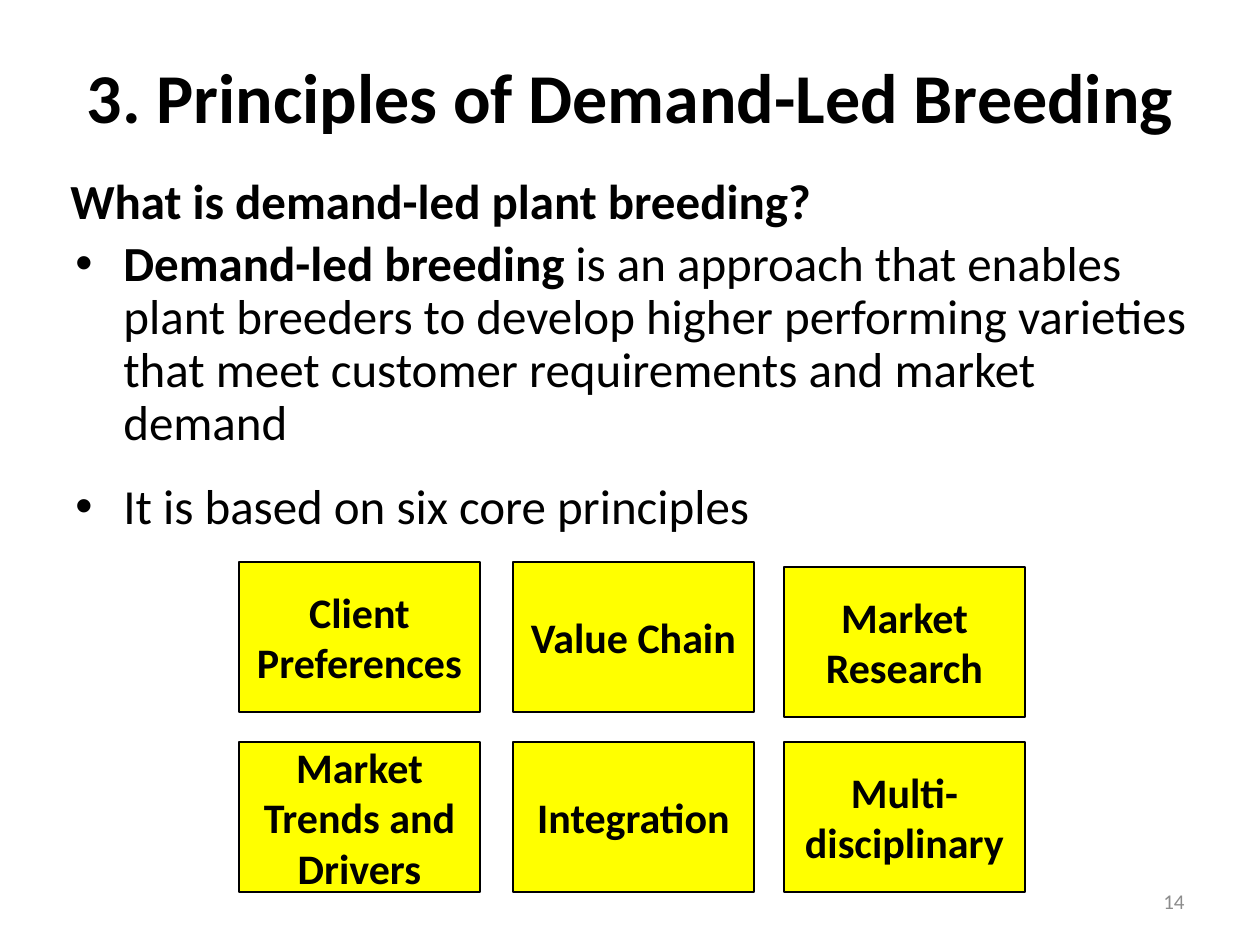
import pptx
import pptx.dml.color
import pptx.enum.shapes
import pptx.enum.text
import pptx.oxml.ns
import pptx.util
from lxml import etree

PX = 914400 / 126
ALIGN = pptx.enum.text.PP_ALIGN
MIDDLE = pptx.enum.text.MSO_ANCHOR.MIDDLE
TOP = pptx.enum.text.MSO_ANCHOR.TOP


def color(value):
    return pptx.dml.color.RGBColor.from_string(value)


def write(paragraph, text, size, bold=False, hex_color="000000"):
    run = paragraph.add_run()
    run.text = text
    for name, value in {"name": "Calibri", "size": pptx.util.Pt(size), "bold": bold}.items():
        setattr(run.font, name, value)
    run.font.color.rgb = color(hex_color)


presentation = pptx.Presentation()
presentation.slide_width = pptx.util.Inches(10)
presentation.slide_height = pptx.util.Inches(7.5)
slide = presentation.slides.add_slide(presentation.slide_layouts[5])

title = slide.shapes.title
title_place = {"left": 63, "top": 38, "width": 1134, "height": 116}
for name, value in title_place.items():
    setattr(title, name, round(value * PX))
title.text_frame.vertical_anchor = MIDDLE
title.text_frame.paragraphs[0].alignment = ALIGN.CENTER
write(title.text_frame.paragraphs[0], "3. Principles of Demand-Led Breeding", 40, True)

text_boxes = [
    ((58, 164, 910, 72), TOP, ALIGN.LEFT,
     [[("What is demand-led plant breeding?", 28, True)]]),
    ((63, 233, 1157, 312), TOP, ALIGN.LEFT,
     [[("Demand-led breeding ", 28, True),
       ("is an approach that enables plant breeders to develop higher performing "
        "varieties that meet customer requirements and market demand", 28)],
      [("It is based on six core principles", 28)]]),
    ((903, 876, 294, 50), MIDDLE, ALIGN.RIGHT,
     [[("14", 12, False, "8C8C8C")]]),
]
frames = []
for place, anchor, alignment, paragraphs in text_boxes:
    frame = slide.shapes.add_textbox(*[round(value * PX) for value in place]).text_frame
    frame.word_wrap = True
    frame.vertical_anchor = anchor
    for index, runs in enumerate(paragraphs):
        paragraph = frame.add_paragraph() if index else frame.paragraphs[0]
        paragraph.alignment = alignment
        for run in runs:
            write(paragraph, *run)
    frames.append(frame)

heading, definition, slide_number = frames
bullet_spacing = {
    "line_spacing": 0.9,
    "space_before": pptx.util.Pt(5.6),
    "space_after": pptx.util.Pt(12),
}
indent = round(48 * PX)
for paragraph in definition.paragraphs:
    for name, value in bullet_spacing.items():
        setattr(paragraph, name, value)
    properties = paragraph._p.get_or_add_pPr()
    properties.set("marL", str(indent))
    properties.set("indent", str(-indent))
    etree.SubElement(properties, pptx.oxml.ns.qn("a:buFont"), typeface="Arial")
    etree.SubElement(properties, pptx.oxml.ns.qn("a:buChar"), char="•")

principles = [
    ("Client Preferences", 239, 562),
    ("Value Chain", 513, 562),
    ("Market Research", 784, 567),
    ("Market Trends and Drivers", 239, 742),
    ("Integration", 513, 742),
    ("Multi-disciplinary", 784, 742),
]
for text, left, top in principles:
    box = slide.shapes.add_shape(
        pptx.enum.shapes.MSO_SHAPE.RECTANGLE,
        *[round(value * PX) for value in (left, top, 241, 150)])
    box.shadow.inherit = False
    box.fill.solid()
    box.fill.fore_color.rgb = color("FFFF00")
    box.line.color.rgb = color("000000")
    box.line.width = pptx.util.Pt(0.75)
    box.text_frame.word_wrap = True
    box.text_frame.vertical_anchor = MIDDLE
    box.text_frame.paragraphs[0].alignment = ALIGN.CENTER
    write(box.text_frame.paragraphs[0], text, 24, True)

presentation.save("out.pptx")
